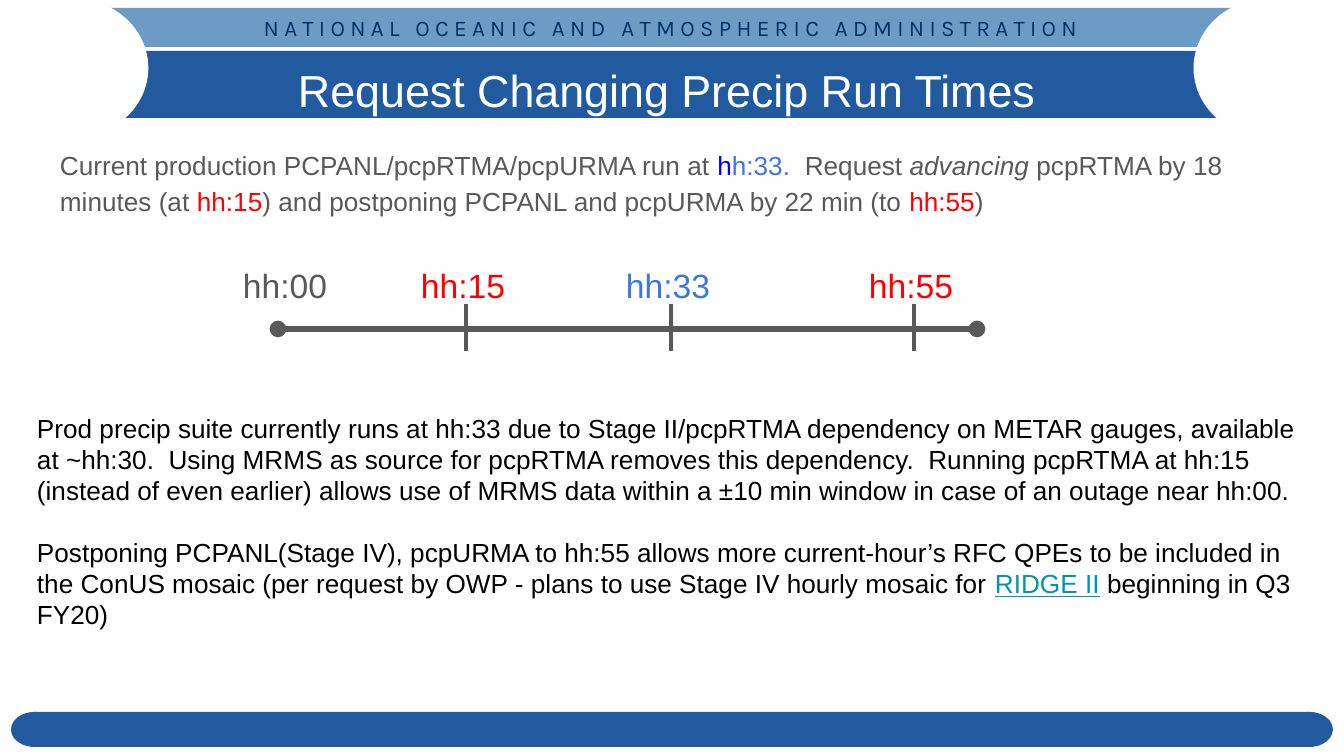
from dataclasses import dataclass

from lxml.etree import SubElement
from pptx import Presentation
from pptx.dml.color import RGBColor
from pptx.enum.shapes import MSO_CONNECTOR as Connector, MSO_SHAPE as Shape
from pptx.enum.text import MSO_ANCHOR as Anchor, MSO_AUTO_SIZE as AutoSize, PP_ALIGN as Align
from pptx.oxml.ns import qn
from pptx.util import Pt

EMU_PER_PX = 914400 / 134.4


@dataclass(frozen=True)
class Theme:
    font: str = "Arial"
    banner_font: str = "Karla"
    sky: str = "6C9BC6"
    navy: str = "003366"
    blue: str = "215A9F"
    white: str = "FFFFFF"
    black: str = "000000"
    gray: str = "595959"
    red: str = "FF0000"
    current: str = "3C78D8"
    accent: str = "0000FF"
    link: str = "0097A7"
    banner_size: int = 12
    body_size: int = 14
    label_size: int = 18
    title_size: int = 24
    axis_width: float = 3
    tick_width: float = 2.25
    edge_width: float = 1.5


THEME = Theme()


def px(value):
    return round(value * EMU_PER_PX)


def apply_format(target, values):
    for name, value in values.items():
        setattr(target, name, value)


def format_frame(frame, inset_y=13, anchor=Anchor.TOP):
    apply_format(frame, {
        "word_wrap": True, "auto_size": AutoSize.NONE, "vertical_anchor": anchor,
        "margin_left": px(13), "margin_right": px(13),
        "margin_top": px(inset_y), "margin_bottom": px(inset_y),
    })


def write_runs(paragraph, runs, size, font=THEME.font, **values):
    apply_format(paragraph, values)
    for text, color, *styles in runs:
        run = paragraph.add_run()
        run.text = text
        apply_format(run.font, {"name": font, "size": Pt(size),
                                **{style: True for style in styles}})
        run.font.color.rgb = RGBColor.from_string(color)


def add_block(slide, kind, box, color, edge=None):
    shape = slide.shapes.add_shape(kind, *map(px, box))
    shape.shadow.inherit = False
    shape.fill.solid()
    shape.fill.fore_color.rgb = RGBColor.from_string(color)
    if edge:
        shape.line.color.rgb = RGBColor.from_string(color)
        shape.line.width = Pt(edge)
    else:
        shape.line.fill.background()
    return shape


def add_text(slide, box):
    frame = slide.shapes.add_textbox(*map(px, box)).text_frame
    format_frame(frame)
    return frame


def add_line(slide, start, end, width, ends=()):
    line = slide.shapes.add_connector(Connector.STRAIGHT, *map(px, (*start, *end)))
    line.line.color.rgb = RGBColor.from_string(THEME.gray)
    line.line.width = Pt(width)
    for end_name in ends:
        SubElement(line.line._ln, qn(f"a:{end_name}"), type="oval")
    SubElement(line._element.spPr, qn("a:effectLst"))


def add_header(slide, box):
    left, top, width, height = box
    banner = add_block(slide, Shape.RECTANGLE, (left + 39, top + 8, width - 78, 39), THEME.sky)
    format_frame(banner.text_frame, 0, Anchor.MIDDLE)
    agency = " ".join("NATIONAL OCEANIC AND ATMOSPHERIC ADMINISTRATION")
    write_runs(banner.text_frame.paragraphs[0], [(agency, THEME.navy)],
               THEME.banner_size, THEME.banner_font, alignment=Align.CENTER)
    add_block(slide, Shape.RECTANGLE, (left + 78, top + 51, width - 156, 67), THEME.blue)
    for notch_left in (left + width - 147, left):
        add_block(slide, Shape.OVAL, (notch_left, top, 147, height), THEME.white, THEME.edge_width)

    title = slide.shapes.title
    slide.shapes._spTree.append(title._element)
    apply_format(title, dict(zip(("left", "top", "width", "height"),
                                 map(px, (left + 195, top + 61, 943, 58)))))
    format_frame(title.text_frame, 0, Anchor.MIDDLE)
    write_runs(title.text_frame.paragraphs[0], [("Request Changing Precip Run Times", THEME.white)],
               THEME.title_size, alignment=Align.CENTER)


def add_footer(slide, box):
    left, top, width, height = box
    cap = 47
    add_block(slide, Shape.RECTANGLE, (left + cap // 2, top, width - cap, height), THEME.blue)
    for cap_left in (left, left + width - cap):
        add_block(slide, Shape.OVAL, (cap_left, top, cap, height), THEME.blue)


def add_request(slide, box):
    runs = [
        ("Current production PCPANL/pcpRTMA/pcpURMA run at ", THEME.gray),
        ("h", THEME.accent),
        ("h:33.  ", THEME.current),
        ("Request ", THEME.gray),
        ("advancing", THEME.gray, "italic"),
        (" pcpRTMA by 18 minutes (at ", THEME.gray),
        ("hh:15", THEME.red),
        (") and postponing PCPANL and pcpURMA by 22 min (to ", THEME.gray),
        ("hh:55", THEME.red),
        (")", THEME.gray),
    ]
    write_runs(add_text(slide, box).paragraphs[0], runs, THEME.body_size, line_spacing=1.15)


def add_timeline(slide, box):
    left, top, width, height = box
    axis_y = top + 83
    add_line(slide, (left + 48, axis_y), (left + 747, axis_y), THEME.axis_width,
             ("headEnd", "tailEnd"))
    marks = [("hh:15", THEME.red, 178), ("hh:33", THEME.current, 383), ("hh:55", THEME.red, 626)]
    paragraph = add_text(slide, (left, top, width, 74)).paragraphs[0]
    runs = [("hh:00", THEME.gray)] + [(f"\t{label}", color) for label, color, _ in marks]
    write_runs(paragraph, runs, THEME.label_size, line_spacing=1.15)
    tabs = SubElement(paragraph._p.get_or_add_pPr(), qn("a:tabLst"))
    for _, _, offset in marks:
        SubElement(tabs, qn("a:tab"), pos=str(px(offset)), algn="l")
        tick_x = left + offset + 58
        add_line(slide, (tick_x, top + 58), (tick_x, top + height), THEME.tick_width)


def add_rationale(slide, box):
    frame = add_text(slide, box)
    write_runs(frame.paragraphs[0], [(
        "Prod precip suite currently runs at hh:33 due to Stage II/pcpRTMA dependency on METAR "
        "gauges, available at ~hh:30.  Using MRMS as source for pcpRTMA removes this dependency.  "
        "Running pcpRTMA at hh:15 (instead of even earlier) allows use of MRMS data within a "
        "±10 min window in case of an outage near hh:00.", THEME.black)], THEME.body_size)
    write_runs(frame.add_paragraph(), [
        ("Postponing PCPANL(Stage IV), pcpURMA to hh:55 allows more current-hour’s RFC QPEs to be "
         "included in the ConUS mosaic (per request by OWP - plans to use Stage IV hourly mosaic "
         "for ", THEME.black),
        ("RIDGE II", THEME.link, "underline"),
        (" beginning in Q3 FY20)", THEME.black),
    ], THEME.body_size, space_before=Pt(16))


def main():
    presentation = Presentation()
    apply_format(presentation, {"slide_width": px(1344), "slide_height": px(756)})
    slide = presentation.slides.add_slide(presentation.slide_layouts[5])
    add_header(slide, (0, 0, 1342, 136))
    add_footer(slide, (11, 712, 1322, 35))
    add_request(slide, (47, 132, 1253, 153))
    add_timeline(slide, (230, 246, 1050, 105))
    add_rationale(slide, (24, 399, 1297, 126))
    presentation.save("out.pptx")


if __name__ == "__main__":
    main()
